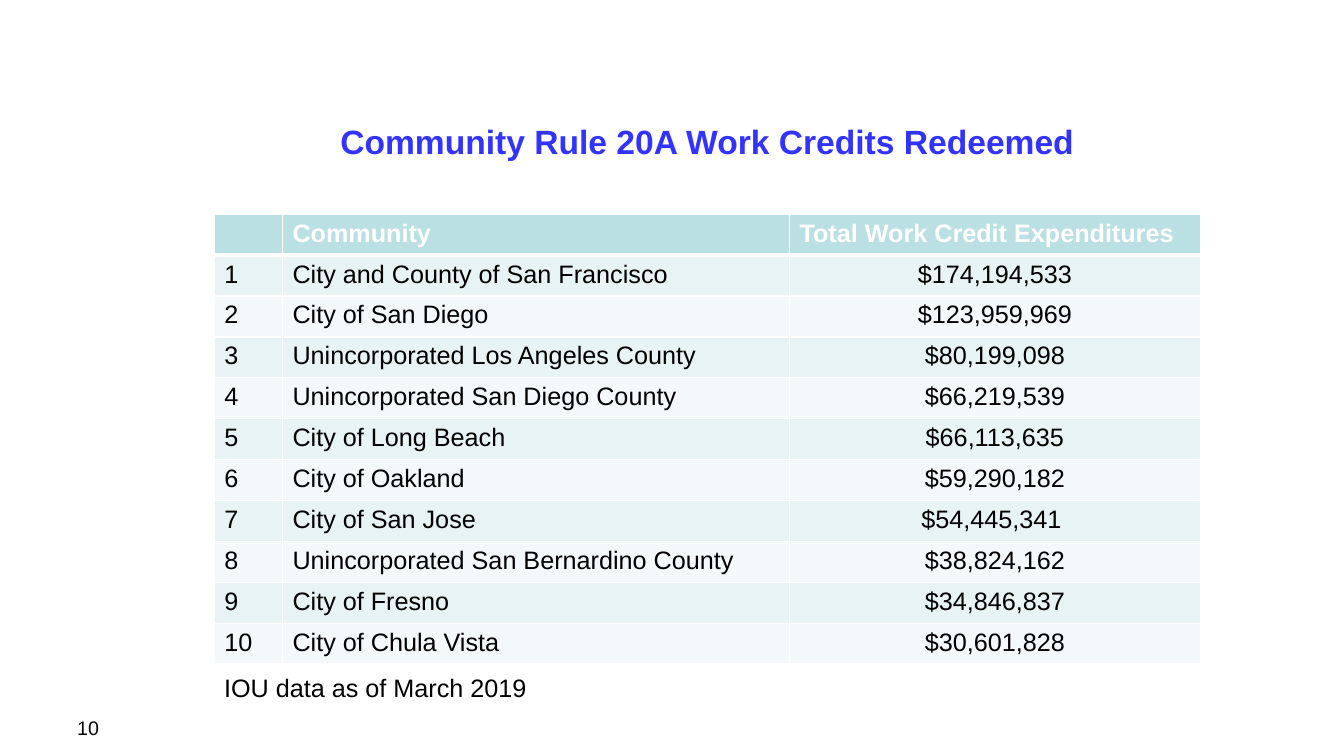
from dataclasses import dataclass

from lxml import etree
from pptx import Presentation
from pptx.dml.color import RGBColor
from pptx.enum.text import MSO_ANCHOR, PP_ALIGN
from pptx.oxml.ns import qn
from pptx.slide import Slide
from pptx.table import _Cell
from pptx.text.text import TextFrame
from pptx.util import Emu, Pt

LEFT, CENTER = PP_ALIGN.LEFT, PP_ALIGN.CENTER
TOP, MIDDLE, BOTTOM = MSO_ANCHOR.TOP, MSO_ANCHOR.MIDDLE, MSO_ANCHOR.BOTTOM
SCALE = 9525  # EMU in one px, at 96 px to the inch


@dataclass(frozen=True)
class Theme:
    font: str = "Arial"
    title: str = "3333FF"
    ink: str = "000000"
    white: str = "FFFFFF"
    head: str = "BBE0E3"
    bands: tuple[str, str] = ("E7F3F4", "F3F9FA")
    title_size: int = 24
    body_size: int = 18
    page_size: int = 14


@dataclass(frozen=True)
class Box:
    left: int
    top: int
    width: int
    height: int


@dataclass(frozen=True)
class Credit:
    town: str
    spent: str


THEME = Theme()
COLS = (65, 483, 391)
ROW, LAST_ROW = 39, 37
HEADS = ("", "Community", "Total Work Credit Expenditures")
CREDITS = (
    Credit("City and County of San Francisco", "$174,194,533"),
    Credit("City of San Diego", "$123,959,969"),
    Credit("Unincorporated Los Angeles County", "$80,199,098"),
    Credit("Unincorporated San Diego County", "$66,219,539"),
    Credit("City of Long Beach", "$66,113,635"),
    Credit("City of Oakland", "$59,290,182"),
    Credit("City of San Jose", "$54,445,341 "),
    Credit("Unincorporated San Bernardino County", "$38,824,162"),
    Credit("City of Fresno", "$34,846,837"),
    Credit("City of Chula Vista", "$30,601,828"),
)


def px(count: int) -> Emu:
    return Emu(count * SCALE)


def spots(box: Box) -> tuple[Emu, Emu, Emu, Emu]:
    return px(box.left), px(box.top), px(box.width), px(box.height)


def write(frame: TextFrame, text: str, *, size: int = THEME.body_size,
          color: str = THEME.ink, bold: bool = False,
          align: PP_ALIGN = LEFT) -> None:
    para = frame.paragraphs[0]
    para.alignment = align
    run = para.add_run()
    run.text = text
    run.font.name = THEME.font
    run.font.size = Pt(size)
    run.font.bold = bold
    run.font.color.rgb = RGBColor.from_string(color)


def add_box(slide: Slide, box: Box, anchor: MSO_ANCHOR = TOP) -> TextFrame:
    frame = slide.shapes.add_textbox(*spots(box)).text_frame
    frame.word_wrap = True
    frame.vertical_anchor = anchor
    return frame


def paint(cell: _Cell, fill: str, top: int, bottom: int) -> None:
    """Fill a cell and rule its four sides in white; weights in points."""
    cell.fill.solid()
    cell.fill.fore_color.rgb = RGBColor.from_string(fill)
    props = cell._tc.get_or_add_tcPr()
    sides = (("a:lnL", 1), ("a:lnR", 1), ("a:lnT", top), ("a:lnB", bottom))
    for spot, (tag, weight) in enumerate(sides):
        line = etree.Element(qn(tag), w=str(Pt(weight)))
        solid = etree.SubElement(line, qn("a:solidFill"))
        etree.SubElement(solid, qn("a:srgbClr"), val=THEME.white)
        props.insert(spot, line)


def add_credits(slide: Slide, box: Box) -> None:
    count = len(CREDITS) + 1
    grid = slide.shapes.add_table(count, len(COLS), *spots(box)).table
    for col, width in zip(grid.columns, COLS):
        col.width = px(width)
    for row in grid.rows:
        row.height = px(ROW)
    grid.rows[count - 1].height = px(LAST_ROW)

    # Header row
    for col, head in enumerate(HEADS):
        cell = grid.cell(0, col)
        paint(cell, THEME.head, 1, 3)
        if head:
            write(cell.text_frame, head, color=THEME.white, bold=True)

    # Ranked communities in alternating bands
    for rank, credit in enumerate(CREDITS, 1):
        for col, text in enumerate((str(rank), credit.town, credit.spent)):
            cell = grid.cell(rank, col)
            paint(cell, THEME.bands[(rank - 1) % 2], 3 if rank == 1 else 1, 1)
            write(cell.text_frame, text, align=CENTER if col == 2 else LEFT)


def main() -> None:
    deck = Presentation()
    deck.slide_width, deck.slide_height = px(1280), px(720)
    slide = deck.slides.add_slide(deck.slide_layouts[6])

    # Title
    write(add_box(slide, Box(147, 98, 1053, 72), MIDDLE),
          "Community Rule 20A Work Credits Redeemed",
          size=THEME.title_size, color=THEME.title, bold=True, align=CENTER)

    # Table
    high = ROW * len(CREDITS) + LAST_ROW
    add_credits(slide, Box(204, 204, sum(COLS), high))

    # Page number and source note
    page = add_box(slide, Box(64, 656, 234, 50), BOTTOM)
    page.margin_bottom = px(2)
    write(page, "10", size=THEME.page_size)
    write(add_box(slide, Box(204, 636, sum(COLS), 38)),
          "IOU data as of March 2019")

    deck.save("out.pptx")


if __name__ == "__main__":
    main()
